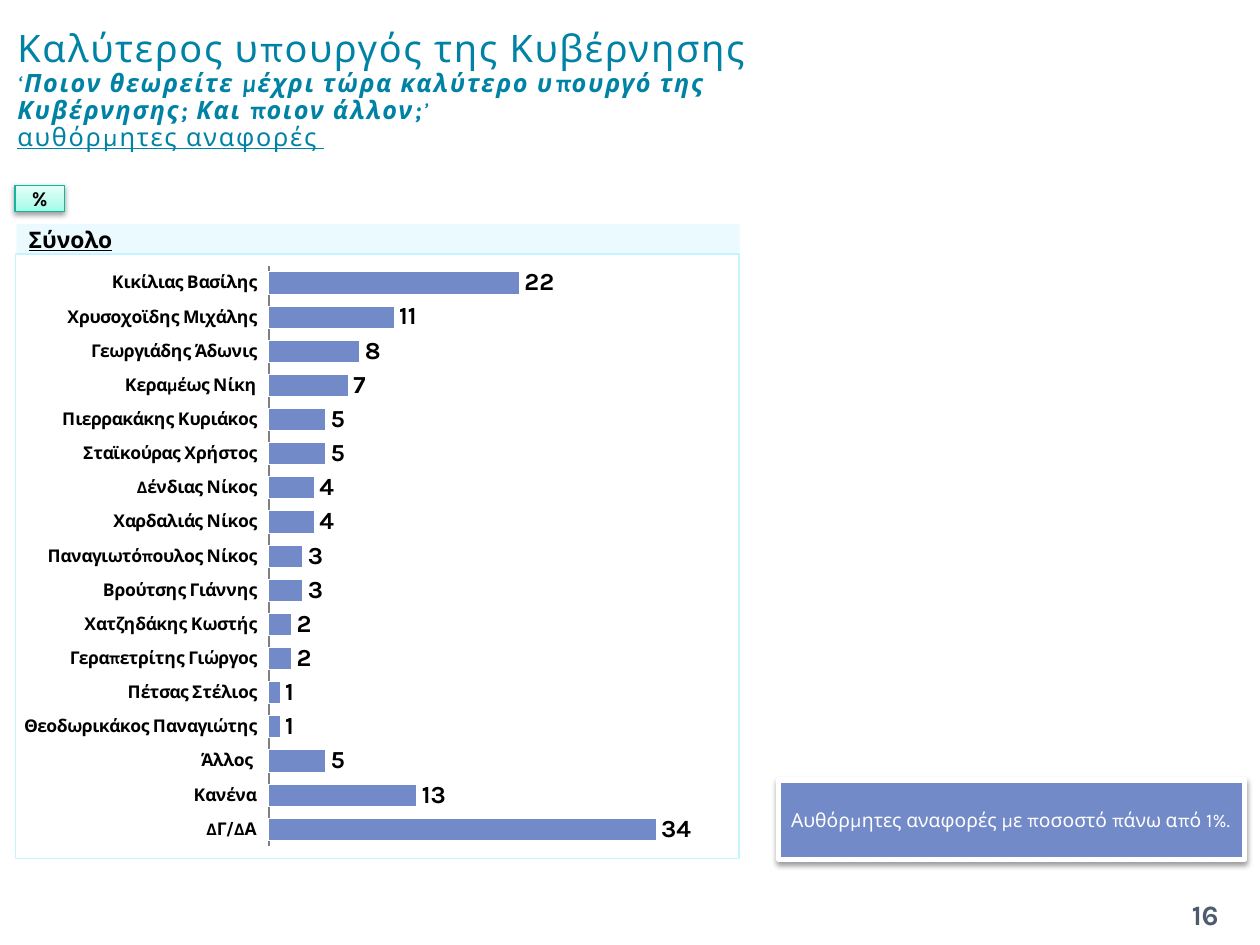
from dataclasses import dataclass

from lxml.etree import SubElement
from pptx import Presentation
from pptx.chart.data import CategoryChartData
from pptx.dml.color import RGBColor
from pptx.enum.chart import XL_CHART_TYPE as ChartType
from pptx.enum.chart import XL_LABEL_POSITION as LabelPosition
from pptx.enum.chart import XL_TICK_LABEL_POSITION as TickLabels
from pptx.enum.chart import XL_TICK_MARK as TickMark
from pptx.enum.shapes import MSO_SHAPE as Preset
from pptx.enum.text import MSO_ANCHOR as Anchor
from pptx.enum.text import PP_ALIGN as Align
from pptx.oxml import parse_xml
from pptx.oxml.ns import nsdecls, qn
from pptx.util import Inches, Pt

FONT = "Karla"
TEAL = RGBColor(0x00, 0x82, 0xA5)
BLUE = RGBColor(0x73, 0x8A, 0xC8)
SLATE = RGBColor(0x4E, 0x5B, 0x6F)
GREEN = RGBColor(0x16, 0xB3, 0x9E)
PALE_CYAN = RGBColor(0xC5, 0xF3, 0xFF)
AXIS_GRAY = RGBColor(0x80, 0x80, 0x80)
BLACK = RGBColor(0, 0, 0)
WHITE = RGBColor(0xFF, 0xFF, 0xFF)


@dataclass
class Area:
    left: float
    top: float
    width: float
    height: float

    def lengths(self) -> list:
        return [Inches(v) for v in (self.left, self.top, self.width, self.height)]


@dataclass
class Style:
    size: float
    color: RGBColor
    bold: bool = False
    italic: bool = False
    underline: bool = False
    spacing: int = 0


@dataclass
class Minister:
    name: str
    share: int


MINISTERS = [
    Minister("Κικίλιας Βασίλης", 22),
    Minister("Χρυσοχοϊδης Μιχάλης", 11),
    Minister("Γεωργιάδης Άδωνις", 8),
    Minister("Κεραμέως Νίκη", 7),
    Minister("Πιερρακάκης Κυριάκος", 5),
    Minister("Σταϊκούρας Χρήστος", 5),
    Minister("Δένδιας Νίκος", 4),
    Minister("Χαρδαλιάς Νίκος", 4),
    Minister("Παναγιωτόπουλος Νίκος", 3),
    Minister("Βρούτσης Γιάννης", 3),
    Minister("Χατζηδάκης Κωστής", 2),
    Minister("Γεραπετρίτης Γιώργος", 2),
    Minister("Πέτσας Στέλιος", 1),
    Minister("Θεοδωρικάκος Παναγιώτης", 1),
    Minister("Άλλος ", 5),
    Minister("Κανένα", 13),
    Minister("ΔΓ/ΔΑ", 34),
]

HEADING = Style(21.6, TEAL, spacing=100)
QUOTE = Style(14.4, TEAL, italic=True, spacing=100)
QUESTION = Style(14.4, TEAL, bold=True, italic=True, spacing=100)
MENTIONS = Style(14.4, TEAL, underline=True, spacing=100)
TITLE_LINES = [
    [("Καλύτερος υπουργός της Κυβέρνησης", HEADING)],
    [
        ("‘", QUOTE),
        ("Ποιον θεωρείτε μέχρι τώρα καλύτερο υπουργό της Κυβέρνησης; Και ποιον άλλον;", QUESTION),
        ("’", QUOTE),
    ],
    [("αυθόρμητες αναφορές ", MENTIONS)],
]


def style_run(run, style: Style) -> None:
    font = run.font
    font.name, font.size = FONT, Pt(style.size)
    font.bold, font.italic, font.underline = style.bold, style.italic, style.underline
    font.color.rgb = style.color
    if style.spacing:
        run._r.get_or_add_rPr().set("spc", str(style.spacing))


def write(shape, text: str, style: Style, align: Align = Align.LEFT) -> None:
    frame = shape.text_frame
    frame.word_wrap = True
    frame.vertical_anchor = Anchor.MIDDLE
    frame.text = text
    frame.paragraphs[0].alignment = align
    for run in frame.paragraphs[0].runs:
        style_run(run, style)


def add_title(slide, area: Area) -> None:
    frame = slide.shapes.add_textbox(*area.lengths()).text_frame
    frame.word_wrap = True
    frame.vertical_anchor = Anchor.MIDDLE
    for index, pieces in enumerate(TITLE_LINES):
        line = frame.add_paragraph() if index else frame.paragraphs[0]
        line.line_spacing = 0.9
        for text, style in pieces:
            run = line.add_run()
            run.text = text
            style_run(run, style)


def add_panel(slide, area: Area, fill: RGBColor):
    panel = slide.shapes.add_shape(Preset.RECTANGLE, *area.lengths())
    panel.shadow.inherit = False
    panel.fill.solid()
    panel.fill.fore_color.rgb = fill
    panel.line.fill.background()
    return panel


def outline(panel, color: RGBColor, width: float) -> None:
    panel.line.color.rgb = color
    panel.line.width = Pt(width)


def drop_shadow(panel) -> None:
    effects = panel._element.spPr.find(qn("a:effectLst"))
    effects.append(parse_xml(
        f'<a:outerShdw {nsdecls("a")} blurRad="40000" dist="20000" dir="5400000" rotWithShape="0">'
        '<a:srgbClr val="000000"><a:alpha val="38000"/></a:srgbClr></a:outerShdw>'))


def mint_gradient(panel) -> None:
    stops = "".join(
        f'<a:gs pos="{position * 1000}"><a:srgbClr val="{color}"/></a:gs>'
        for position, color in ((0, "9DFDE8"), (35, "BBFCED"), (100, "E4FFF9")))
    properties = panel._element.spPr
    properties.replace(properties.find(qn("a:solidFill")), parse_xml(
        f'<a:gradFill {nsdecls("a")} rotWithShape="1"><a:gsLst>{stops}</a:gsLst>'
        '<a:lin ang="16200000" scaled="0"/></a:gradFill>'))


def add_total_band(slide, area: Area) -> None:
    band = add_panel(slide, area, PALE_CYAN)
    tint = band._element.spPr.find(qn("a:solidFill"))[0]
    SubElement(tint, qn("a:alpha")).set("val", "35000")
    tabs = SubElement(band.text_frame.paragraphs[0]._p.get_or_add_pPr(), qn("a:tabLst"))
    SubElement(tabs, qn("a:tab"), pos=str(Inches(1.13)), algn="l")
    write(band, "Σύνολο\t", Style(13, BLACK, bold=True, underline=True))


def add_minister_chart(slide, area: Area) -> None:
    data = CategoryChartData(number_format="0")
    data.categories = [minister.name for minister in MINISTERS]
    data.add_series("Series 1", [minister.share for minister in MINISTERS])
    chart = slide.shapes.add_chart(ChartType.BAR_CLUSTERED, *area.lengths(), data).chart
    chart.has_legend = chart.has_title = False
    chart.font.name, chart.font.size = FONT, Pt(18)
    chart.font.color.rgb = BLACK

    names = chart.category_axis
    names.reverse_order = True
    names.major_tick_mark = names.minor_tick_mark = TickMark.NONE
    names.tick_label_position = TickLabels.LOW
    names.tick_labels.font.size, names.tick_labels.font.bold = Pt(10), True
    names.format.line.color.rgb = AXIS_GRAY
    names.format.line.width = Pt(1)
    shares = chart.value_axis
    shares.visible = shares.has_major_gridlines = False
    shares.minimum_scale, shares.maximum_scale = 0, 40

    plot = chart.plots[0]
    plot.gap_width, plot.overlap, plot.vary_by_categories = 54, -25, False
    bars = plot.series[0].format
    bars.fill.solid()
    bars.fill.fore_color.rgb = BLUE
    bars.line.color.rgb = WHITE
    plot.has_data_labels = True
    labels = plot.data_labels
    labels.show_value, labels.position = True, LabelPosition.OUTSIDE_END
    labels.number_format, labels.number_format_is_linked = "0", False
    labels.font.name, labels.font.size, labels.font.bold = FONT, Pt(14), True
    labels.font.color.rgb = BLACK

    body = chart._chartSpace.find(qn("c:chart"))
    body.addnext(parse_xml(
        f'<c:spPr {nsdecls("c", "a")}><a:noFill/><a:ln w="{Pt(0.75)}"><a:solidFill>'
        f'<a:srgbClr val="{PALE_CYAN}"/></a:solidFill></a:ln></c:spPr>'))
    plot_area = body.find(qn("c:plotArea"))
    for old in plot_area.findall(qn("c:layout")):
        plot_area.remove(old)
    places = (("layoutTarget", "inner"), ("xMode", "edge"), ("yMode", "edge"),
              ("x", 0.35), ("y", 0.02), ("w", 0.63), ("h", 0.96))
    layout = "".join(f'<c:{key} val="{value}"/>' for key, value in places)
    plot_area.insert(0, parse_xml(
        f'<c:layout {nsdecls("c")}><c:manualLayout>{layout}</c:manualLayout></c:layout>'))


def main() -> None:
    deck = Presentation()
    deck.slide_width, deck.slide_height = Inches(10), Inches(7.5)
    slide = deck.slides.add_slide(deck.slide_layouts[6])
    add_title(slide, Area(0.04, 0.13, 6.85, 1.18))
    add_minister_chart(slide, Area(0.12, 2.01, 5.75, 4.81))
    page_number = slide.shapes.add_textbox(*Area(9.17, 7.06, 0.79, 0.4).lengths())
    write(page_number, "16", Style(16, SLATE, bold=True), Align.CENTER)
    add_total_band(slide, Area(0.13, 1.78, 5.74, 0.24))

    percent = add_panel(slide, Area(0.12, 1.47, 0.39, 0.21), WHITE)
    mint_gradient(percent)
    outline(percent, GREEN, 0.75)
    drop_shadow(percent)
    write(percent, "%", Style(12, BLACK, bold=True), Align.CENTER)

    remark = add_panel(slide, Area(6.18, 6.19, 3.7, 0.63), BLUE)
    outline(remark, WHITE, 3)
    drop_shadow(remark)
    write(remark, "Αυθόρμητες αναφορές με ποσοστό πάνω από 1%.", Style(11, WHITE))
    deck.save("out.pptx")


if __name__ == "__main__":
    main()
